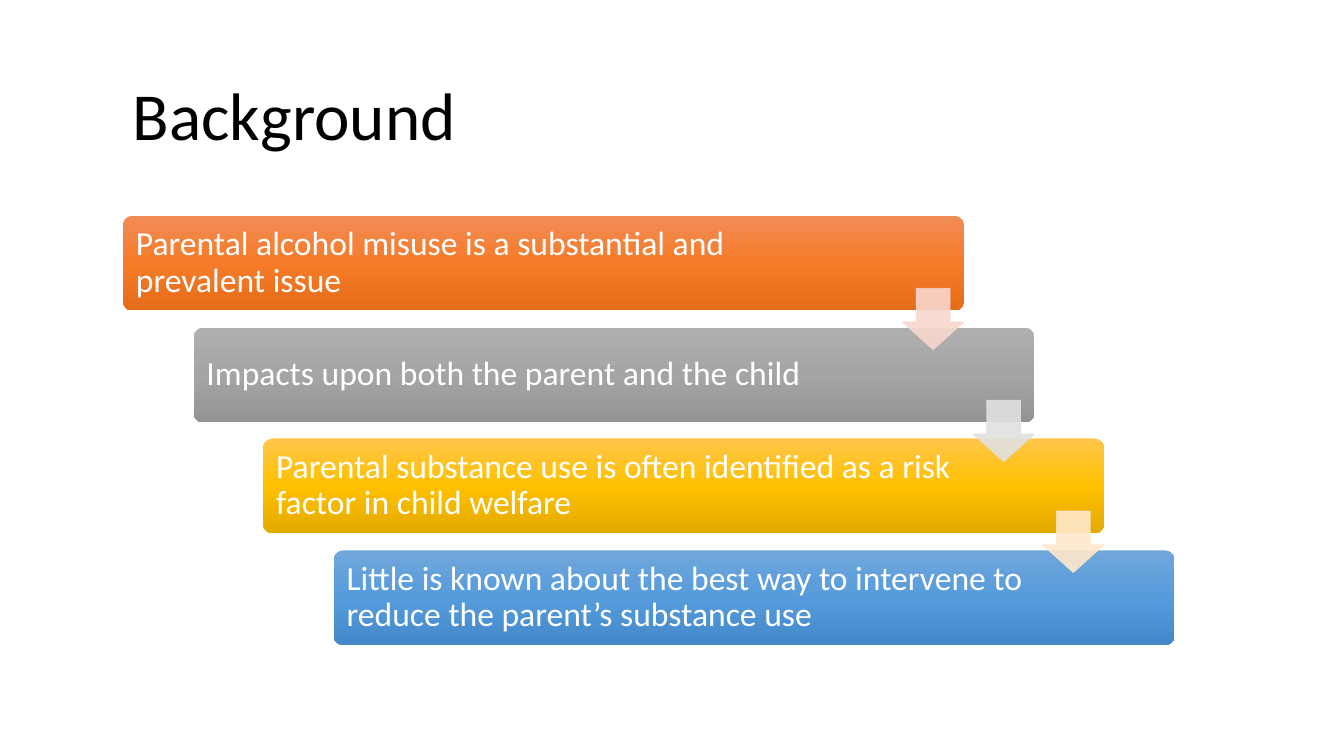
import copy

import pptx
import pptx.dml.color
import pptx.enum.shapes
import pptx.enum.text
import pptx.oxml.ns
import pptx.oxml.xmlchemy
import pptx.util
from lxml import etree

PX = 9144  # EMU per px, 100 px to the inch
SHAPE = pptx.enum.shapes.MSO_SHAPE
qn = pptx.oxml.ns.qn


def px(*lengths):
    return [pptx.util.Emu(length * PX) for length in lengths]


def color(hex_string):
    return pptx.dml.color.RGBColor.from_string(hex_string)


def write(frame, text, size=24, hex_color="FFFFFF", font="Calibri", space_after=0):
    paragraph = frame.paragraphs[0]
    paragraph.line_spacing = 0.9
    paragraph.space_after = pptx.util.Pt(space_after)
    run = paragraph.add_run()
    run.text = text
    run.font.name = font
    run.font.size = pptx.util.Pt(size)
    run.font.color.rgb = color(hex_color)


class Deck:
    def __init__(self, width, height):
        self.presentation = pptx.Presentation()
        self.presentation.slide_width, self.presentation.slide_height = px(width, height)
        self.slide = self.presentation.slides.add_slide(self.presentation.slide_layouts[6])

    def text(self, box, text, vertical_inset=10, **text_format):
        frame = self.slide.shapes.add_textbox(*px(*box)).text_frame
        frame.word_wrap = True
        frame.vertical_anchor = pptx.enum.text.MSO_ANCHOR.MIDDLE
        frame.margin_left, frame.margin_right = px(10, 10)
        frame.margin_top, frame.margin_bottom = px(vertical_inset, vertical_inset)
        write(frame, text, **text_format)

    def shape(self, kind, box, adjustments):
        shape = self.slide.shapes.add_shape(kind, *px(*box))
        shape.shadow.inherit = False
        for index, value in enumerate(adjustments):
            shape.adjustments[index] = value
        return shape

    def bar(self, box, gradient):
        shape = self.shape(SHAPE.ROUNDED_RECTANGLE, box, [0.1])
        shape.line.fill.background()
        shape.fill.gradient()
        shape.fill.gradient_angle = 270
        # A third stop in the middle
        stop_list = shape.element.spPr.find(qn("a:gradFill")).find(qn("a:gsLst"))
        stop_list.insert(1, copy.deepcopy(stop_list[0]))
        for index, stop in enumerate(shape.fill.gradient_stops):
            stop.position = index / 2
            stop.color.rgb = color(gradient[index])

    def arrow(self, box, hex_color):
        shape = self.shape(SHAPE.DOWN_ARROW, box, [0.55, 0.45])
        shape.fill.solid()
        shape.fill.fore_color.rgb = color(hex_color)
        shape.line.color.rgb = color(hex_color)
        shape.line.width = pptx.util.Pt(0.5)
        # 90 % opacity for fill and line
        for element in shape.element.spPr.iter(qn("a:srgbClr")):
            etree.SubElement(element, qn("a:alpha")).set("val", "90000")


# Text, text width, gradient and colour of the arrow to the next step
STEPS = [
    ("Parental alcohol misuse is a substantial and prevalent issue",
     725, ("F18C57", "F67B28", "E56C19"), "F8D7CE"),
    ("Impacts upon both the parent and the child",
     697, ("AFAFAF", "A5A5A5", "939393"), "E1E1E1"),
    ("Parental substance use is often identified as a risk factor in child welfare",
     697, ("FFC64B", "FFC000", "E3AB00"), "FFE8CC"),
    ("Little is known about the best way to intervene to reduce the parent’s substance use",
     697, ("71A6DB", "559BDB", "448ACA"), None),
]


def main():
    deck = Deck(1333, 750)

    # Title
    deck.text((122, 50, 1037, 136), "Background", vertical_inset=5,
              size=48, hex_color="000000")

    # Staircase of bars, evenly spread over 209 by 332 px
    corners = [(122 + round(209 * i / 3), 214 + round(332 * i / 3))
               for i in range(len(STEPS))]
    for (left, top), (text, text_width, gradient, _) in zip(corners, STEPS):
        deck.bar((left, top, 834, 94), gradient)
        deck.text((left + 3, top + 3, text_width, 88), text, space_after=8)

    # Arrows from each bar to the next
    for (left, top), (*_, arrow_color) in zip(corners, STEPS):
        if arrow_color:
            deck.arrow((left + 773, top + 72, 61, 61), arrow_color)

    deck.presentation.save("out.pptx")


if __name__ == "__main__":
    main()
